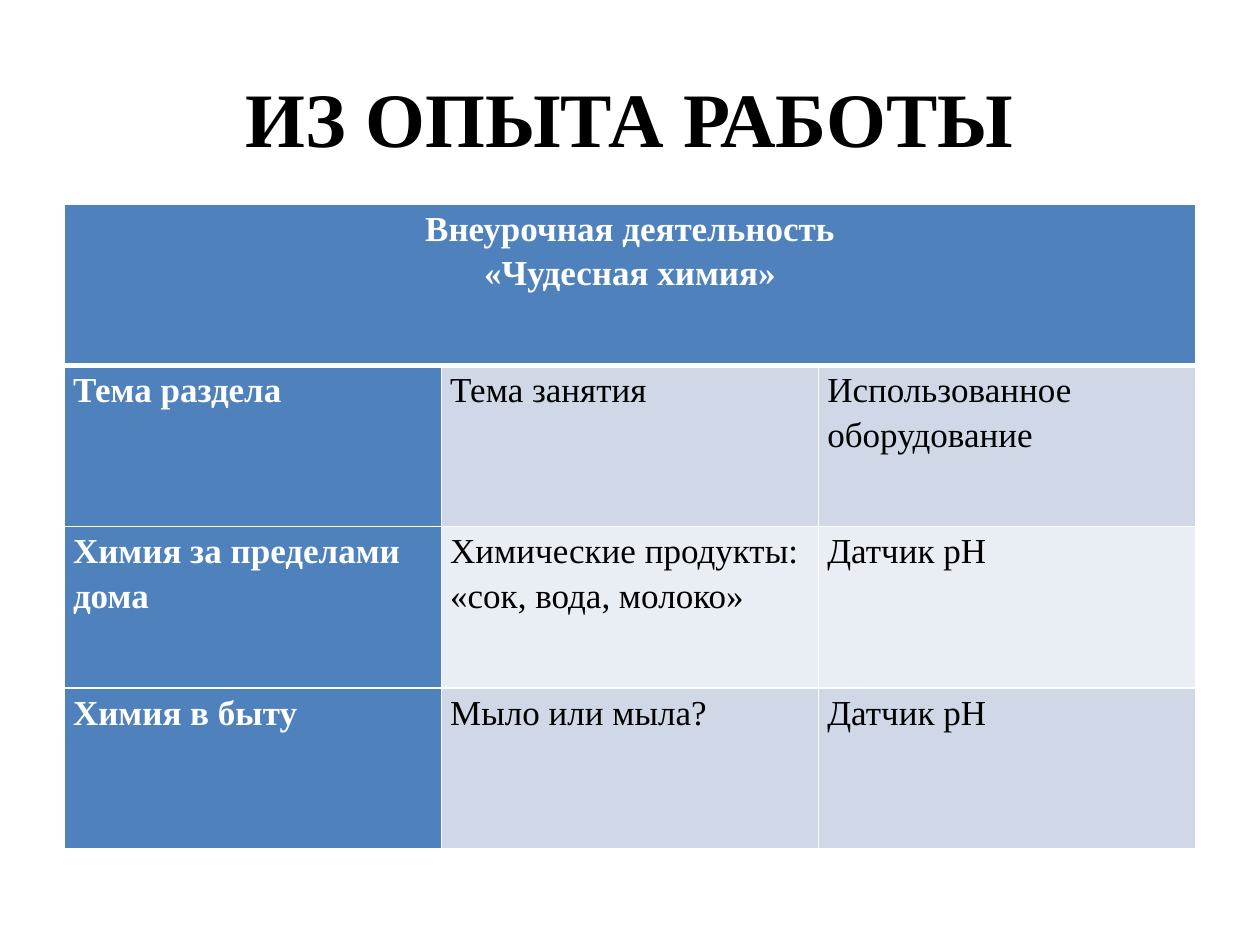
"""Build the slide on extracurricular chemistry lessons."""
import pptx
import pptx.dml.color
import pptx.enum.text
import pptx.util
from lxml import etree
from pptx.oxml.ns import qn

Inches = pptx.util.Inches
Pt = pptx.util.Pt
RGBColor = pptx.dml.color.RGBColor
PP_ALIGN = pptx.enum.text.PP_ALIGN
MSO_ANCHOR = pptx.enum.text.MSO_ANCHOR

BLACK = RGBColor(0x00, 0x00, 0x00)
WHITE = RGBColor(0xFF, 0xFF, 0xFF)
BLUE = RGBColor(0x4F, 0x81, 0xBD)
BAND_DARK = RGBColor(0xD0, 0xD8, 0xE8)
BAND_LIGHT = RGBColor(0xE9, 0xED, 0xF4)

HEADING = "Внеурочная деятельность\n«Чудесная химия»"
ROWS = [
    ("Тема раздела", "Тема занятия", "Использованное оборудование"),
    ("Химия за пределами дома", "Химические продукты: «сок, вода, молоко»", "Датчик рН"),
    ("Химия в быту", "Мыло или мыла?", "Датчик рН"),
]


class SlideBuilder:
    font = "Times New Roman"

    def __init__(self, prs):
        self.s = prs.slides.add_slide(prs.slide_layouts[5])

    def style(self, p, size, color, bold, align):
        p.alignment = align
        p.font.name = self.font
        p.font.size = Pt(size)
        p.font.bold = bold
        p.font.color.rgb = color

    def title(self, text, left, top, width, height):
        sp = self.s.shapes.title
        sp.left, sp.top = Inches(left), Inches(top)
        sp.width, sp.height = Inches(width), Inches(height)
        tf = sp.text_frame
        tf.text = text
        tf.vertical_anchor = MSO_ANCHOR.MIDDLE
        self.style(tf.paragraphs[0], 44, BLACK, True, PP_ALIGN.CENTER)

    def border(self, cell, side, width):
        tc_pr = cell._tc.get_or_add_tcPr()
        ln = etree.SubElement(tc_pr, qn(f"a:ln{side}"), w=str(Pt(width)))
        fill = etree.SubElement(ln, qn("a:solidFill"))
        etree.SubElement(fill, qn("a:srgbClr"), val=str(WHITE))

    def cell(self, cell, text, fill, header, align=PP_ALIGN.LEFT, top=1, bottom=1):
        cell.margin_left = cell.margin_right = Inches(0.07)
        cell.margin_top = cell.margin_bottom = 0
        for side, width in (("L", 1), ("R", 1), ("T", top), ("B", bottom)):
            self.border(cell, side, width)
        cell.fill.solid()
        cell.fill.fore_color.rgb = fill
        cell.text = text
        for p in cell.text_frame.paragraphs:
            p.line_spacing = 1.15
            self.style(p, 20, WHITE if header else BLACK, header, align)

    def table(self, heading, rows, left, top, width, height):
        n_cols = len(rows[0])
        table = self.s.shapes.add_table(
            len(rows) + 1, n_cols,
            Inches(left), Inches(top), Inches(width), Inches(height)).table
        table.first_col = True
        table.cell(0, 0).merge(table.cell(0, n_cols - 1))
        for c in range(n_cols):
            self.cell(table.cell(0, c), "" if c else heading, BLUE, True,
                      PP_ALIGN.CENTER, bottom=3)
        for r, row in enumerate(rows, 1):
            band = BAND_DARK if r % 2 else BAND_LIGHT
            for c, text in enumerate(row):
                self.cell(table.cell(r, c), text, band if c else BLUE, c == 0,
                          top=3 if r == 1 else 1)


def main():
    prs = pptx.Presentation()
    prs.slide_width, prs.slide_height = Inches(10), Inches(7.5)
    slide = SlideBuilder(prs)
    slide.title("ИЗ ОПЫТА РАБОТЫ", 0.5, 0.3, 9, 1.25)
    slide.table(HEADING, ROWS, 0.51, 1.62, 8.98, 5.12)
    prs.save("out.pptx")


if __name__ == "__main__":
    main()
